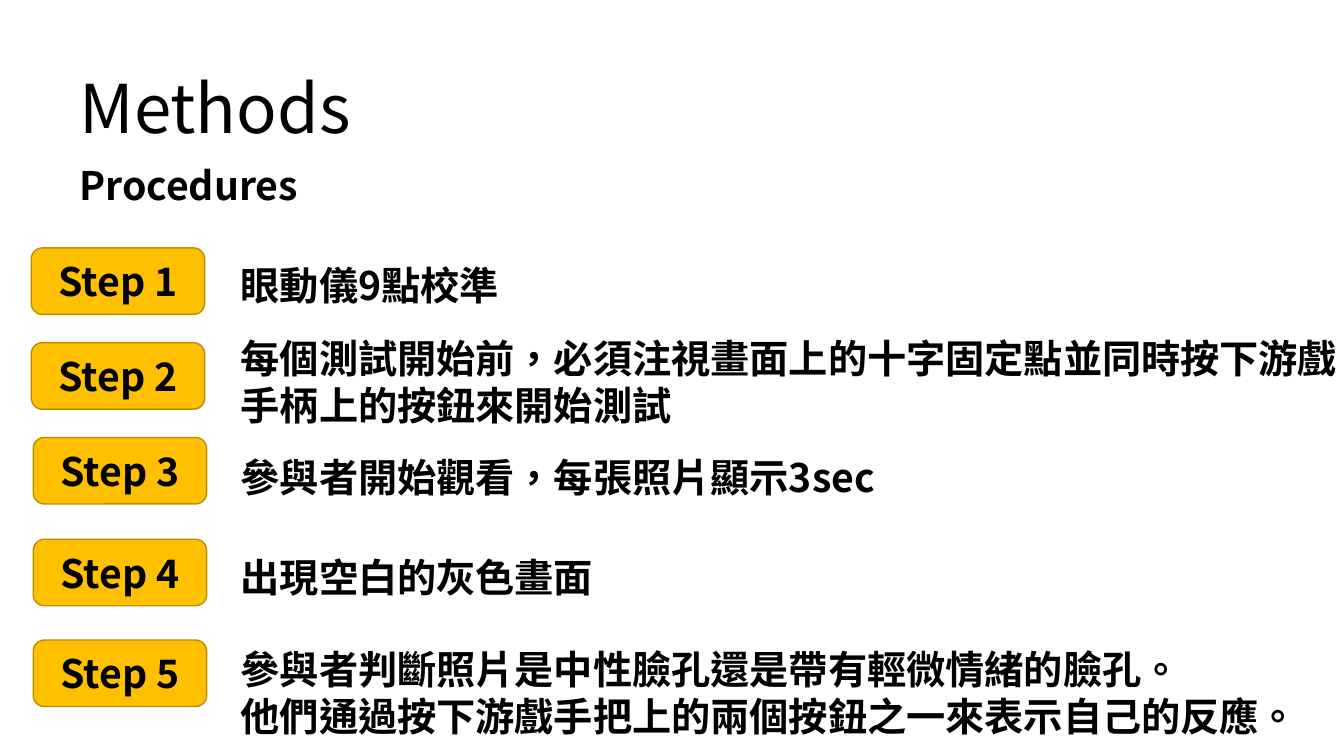
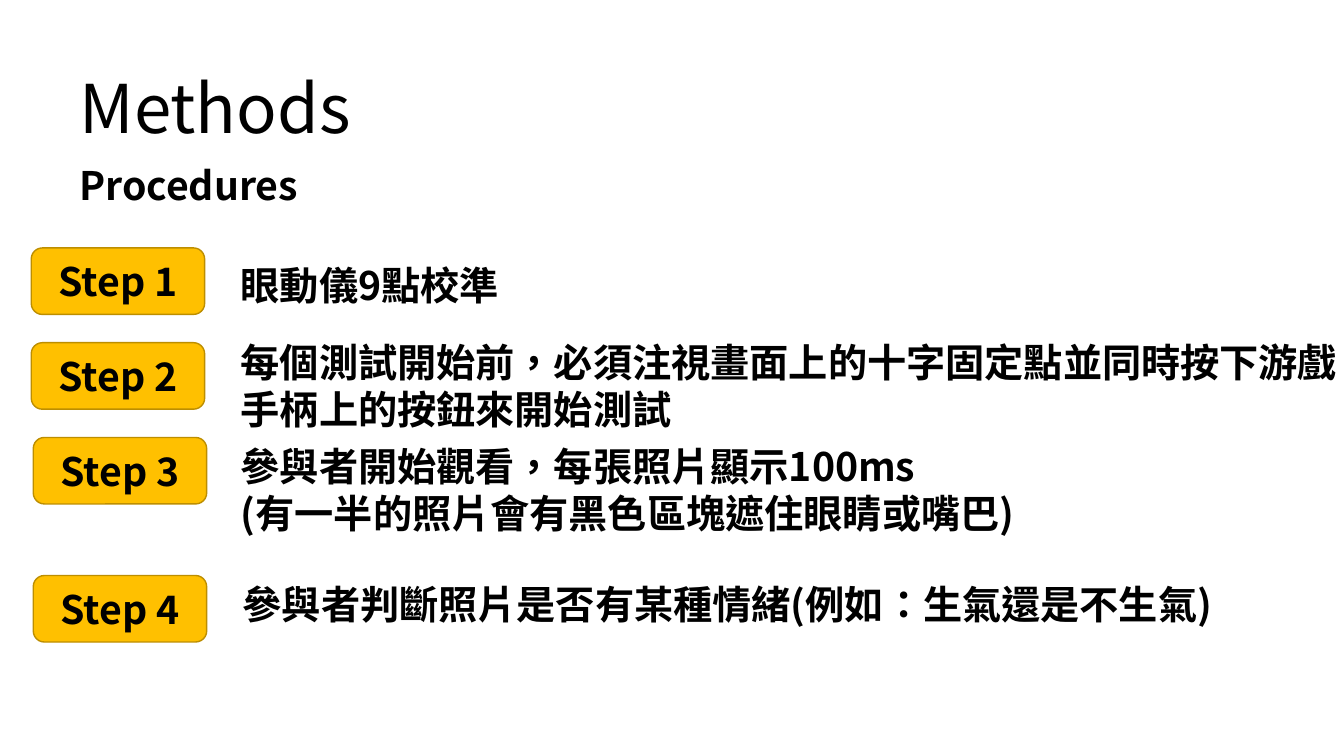
from dataclasses import dataclass

from lxml.etree import SubElement
from pptx import Presentation
from pptx.dml.color import RGBColor
from pptx.enum.shapes import MSO_SHAPE as Shape
from pptx.enum.text import MSO_ANCHOR as Anchor, MSO_AUTO_SIZE as AutoSize, PP_ALIGN as Align
from pptx.oxml.ns import qn
from pptx.util import Inches, Pt

FONT = "Noto Sans CJK SC"
BLACK, GOLD, DARK_GOLD = "000000", "FFC000", "BD8E00"
HEADING_LEFT, TEXT_LEFT = 0.69, 2.29
TEXT_WIDTH, LINE_HEIGHT, TEXT_PADDING = 11.04, 0.47, 0.1
BADGE_WIDTH, BADGE_HEIGHT = 1.72, 0.66


@dataclass
class Step:
    """A numbered badge and the description beside it."""
    badge_left: float
    badge_top: float
    text_top: float
    lines: list[str]
    rows: int = 1
    text_left: float = TEXT_LEFT


CALIBRATE = Step(0.31, 2.46, 2.54, ["眼動儀9點校準"])
FIXATION = "每個測試開始前，必須注視畫面上的十字固定點並同時按下游戲手柄上的按鈕來開始測試"

PROCEDURES = [
    [
        CALIBRATE,
        Step(0.31, 3.4, 3.27, [FIXATION], 2),
        Step(0.33, 4.34, 4.45, ["參與者開始觀看，每張照片顯示3sec"]),
        Step(0.33, 5.35, 5.44, ["出現空白的灰色畫面"]),
        Step(0.33, 6.35, 6.35, ["參與者判斷照片是中性臉孔還是帶有輕微情緒的臉孔。",
                                "他們通過按下游戲手把上的兩個按鈕之一來表示自己的反應。"], 2),
    ],
    [
        CALIBRATE,
        Step(0.31, 3.4, 3.31, [FIXATION], 2),
        Step(0.33, 4.34, 4.34, ["參與者開始觀看，每張照片顯示100ms",
                                "(有一半的照片會有黑色區塊遮住眼睛或嘴巴)"], 2),
        Step(0.33, 5.71, 5.71, ["參與者判斷照片是否有某種情緒(例如：生氣還是不生氣)"],
             text_left=2.31),
    ],
]


def color(value: str) -> RGBColor:
    """Turn a hex string into a colour."""
    return RGBColor.from_string(value)


def write(frame, lines: list[str], size: int = 28, bold: bool = True,
          align=Align.LEFT, anchor=Anchor.TOP) -> None:
    """Fill a text frame with one paragraph per line in the deck's font."""
    frame.word_wrap = True
    frame.vertical_anchor = anchor
    frame.text = "\n".join(lines)
    for para in frame.paragraphs:
        para.alignment = align
        font = para.font
        font.name, font.size, font.bold = FONT, Pt(size), bold
        font.color.rgb = color(BLACK)
        properties = para._p.pPr.find(qn("a:defRPr"))
        properties.set("lang", "zh-TW")
        SubElement(properties, qn("a:ea"), typeface=FONT)


def add_text(page, left: float, top: float, width: float, lines: list[str], rows: int = 1) -> None:
    """Add a bold text box tall enough for its rows."""
    height = TEXT_PADDING + rows * LINE_HEIGHT
    box = page.shapes.add_textbox(Inches(left), Inches(top), Inches(width), Inches(height))
    write(box.text_frame, lines)
    box.text_frame.margin_right = 0
    box.text_frame.auto_size = AutoSize.SHAPE_TO_FIT_TEXT


def add_badge(page, left: float, top: float, label: str) -> None:
    """Add a gold rounded step label."""
    badge = page.shapes.add_shape(Shape.ROUNDED_RECTANGLE, Inches(left), Inches(top),
                                  Inches(BADGE_WIDTH), Inches(BADGE_HEIGHT))
    badge.shadow.inherit = False
    badge.fill.solid()
    badge.fill.fore_color.rgb = color(GOLD)
    badge.line.color.rgb = color(DARK_GOLD)
    badge.line.width = Pt(1)
    write(badge.text_frame, [label], align=Align.CENTER, anchor=Anchor.MIDDLE)


def add_heading(page) -> None:
    """Set the slide title and its subtitle."""
    title = page.shapes.title
    title.left, title.top = Inches(HEADING_LEFT), Inches(0.61)
    title.width, title.height = Inches(11.95), Inches(0.91)
    write(title.text_frame, ["Methods"], size=48, bold=False)
    title.text_frame.auto_size = AutoSize.NONE
    add_text(page, HEADING_LEFT, 1.55, 2.39, ["Procedures"])


def add_procedure(deck, steps: list[Step]) -> None:
    """Add a slide listing the steps of one procedure."""
    page = deck.slides.add_slide(deck.slide_layouts[5])
    add_heading(page)
    for number, step in enumerate(steps, start=1):
        add_badge(page, step.badge_left, step.badge_top, f"Step {number}")
        add_text(page, step.text_left, step.text_top, TEXT_WIDTH, step.lines, step.rows)


def main() -> None:
    """Build and save the deck."""
    deck = Presentation()
    deck.slide_width, deck.slide_height = Inches(13.33), Inches(7.5)
    for steps in PROCEDURES:
        add_procedure(deck, steps)
    deck.save("out.pptx")


if __name__ == "__main__":
    main()
